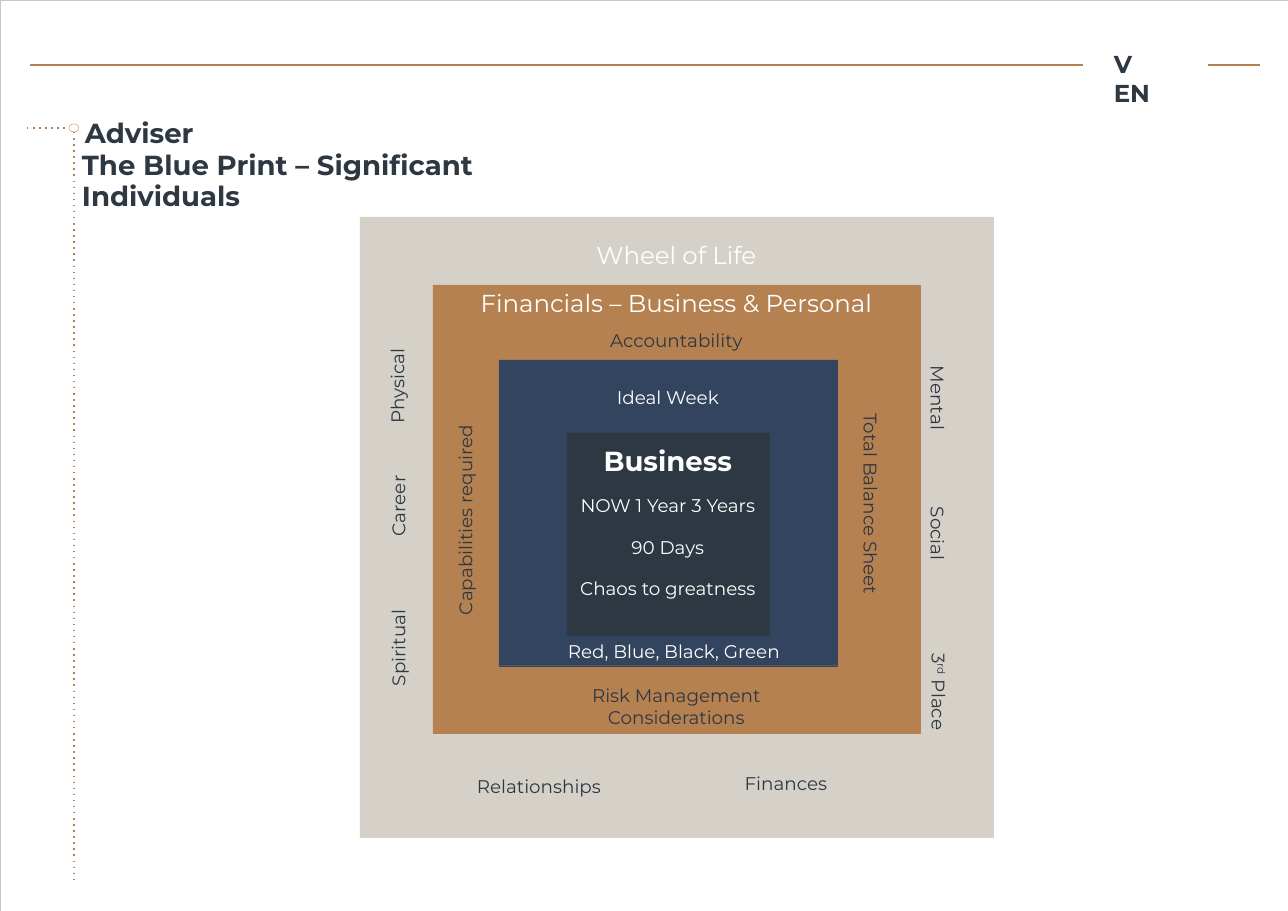
from dataclasses import dataclass

import pptx
import pptx.dml.color
import pptx.enum.dml
import pptx.enum.shapes
import pptx.enum.text
import pptx.oxml
import pptx.oxml.ns
import pptx.util

PX = 8298  # EMU per px
RGBColor = pptx.dml.color.RGBColor
WHITE = RGBColor(0xFD, 0xFF, 0xFF)
INK = RGBColor(0x2D, 0x38, 0x42)
NAVY = RGBColor(0x33, 0x44, 0x5F)
BRONZE = RGBColor(0xB6, 0x81, 0x50)
STONE = RGBColor(0xD5, 0xD1, 0xC9)
FRAME_GREY = RGBColor(0xC7, 0xC7, 0xC7)

SHAPES = pptx.enum.shapes.MSO_SHAPE
ALIGN = pptx.enum.text.PP_ALIGN
ANCHOR = pptx.enum.text.MSO_ANCHOR
THICKNESS = 26  # px across a label


@dataclass(frozen=True)
class Line:
    text: str  # text between bars is raised
    size: int = 12
    color: RGBColor = INK
    bold: bool = False
    before: float = 0  # pt
    indent: int = 0  # px


@dataclass(frozen=True)
class Layer:
    x: int
    y: int
    width: int
    height: int
    color: RGBColor
    inset: int
    lines: tuple[Line, ...]


@dataclass(frozen=True)
class Label:
    text: str
    center_x: int
    center_y: int
    length: int
    turn: str = "horz"


@dataclass(frozen=True)
class Rule:
    x1: int
    y1: int
    x2: int
    y2: int
    dotted: bool = False


LAYERS = (
    Layer(360, 217, 633, 621, STONE, 23, (Line("Wheel of Life", 16, WHITE),)),
    Layer(433, 285, 487, 449, BRONZE, 3, (
        Line("Financials – Business & Personal", 16, WHITE),
        Line("Accountability", before=7.9),
        Line("Risk Management", before=217.5),
        Line("Considerations"),
    )),
    Layer(499, 360, 338, 306, NAVY, 26, (
        Line("Ideal Week", color=WHITE),
        Line("Red, Blue, Black, Green", color=WHITE, before=152, indent=12),
    )),
    Layer(567, 433, 202, 202, INK, 11, (
        Line("Business", 18, WHITE, bold=True),
        Line("NOW 1 Year 3 Years", color=WHITE, before=11),
        Line("90 Days", color=WHITE, before=13.5),
        Line("Chaos to greatness", color=WHITE, before=12.5),
    )),
)

LABELS = (
    Label("Physical", 397, 386, 90, "vert270"),
    Label("Career", 398, 506, 80, "vert270"),
    Label("Spiritual", 398, 648, 90, "vert270"),
    Label("Mental", 938, 398, 80, "vert"),
    Label("Social", 938, 534, 70, "vert"),
    Label("3|rd| Place", 939, 692, 90, "vert"),
    Label("Capabilities required", 465, 520, 210, "vert270"),
    Label("Total Balance Sheet", 871, 504, 200, "vert"),
    Label("Relationships", 539, 786, 140),
    Label("Finances", 786, 783, 100),
)

RULES = (
    Rule(30, 65, 1083, 65),
    Rule(1208, 65, 1260, 65),
    Rule(27, 128, 69, 128, dotted=True),
    Rule(74, 132, 74, 884, dotted=True),
)


def apply(target, values: dict) -> None:
    for name, value in values.items():
        setattr(target, name, value)


def box(x: int, y: int, width: int, height: int) -> tuple[int, ...]:
    return tuple(PX * side for side in (x, y, width, height))


def write(frame, lines: tuple[Line, ...], align, inset: int = 0,
          anchor=ANCHOR.TOP, spacing: float | None = None) -> None:
    apply(frame, {"word_wrap": True, "vertical_anchor": anchor, "margin_left": 0,
                  "margin_right": 0, "margin_top": inset * PX, "margin_bottom": 0})
    for index, line in enumerate(lines):
        paragraph = frame.add_paragraph() if index else frame.paragraphs[0]
        apply(paragraph, {"alignment": align, "space_before": pptx.util.Pt(line.before)})
        if spacing:
            paragraph.line_spacing = pptx.util.Pt(spacing)
        if line.indent:
            paragraph._p.get_or_add_pPr().set("marL", str(line.indent * PX))
        for part, text in enumerate(line.text.split("|")):
            run = paragraph.add_run()
            run.text = text
            apply(run.font, {"name": "Montserrat", "size": pptx.util.Pt(line.size),
                             "bold": line.bold})
            run.font.color.rgb = line.color
            if part % 2:
                run._r.get_or_add_rPr().set("baseline", "32000")


def draw_outline(slide, kind, area: tuple[int, ...], color: RGBColor):
    shape = slide.shapes.add_shape(kind, *area)
    shape.shadow.inherit = False
    shape.fill.background()
    shape.line.color.rgb = color
    shape.line.width = pptx.util.Pt(0.25)
    return shape


def draw_layer(slide, layer: Layer) -> None:
    area = box(layer.x, layer.y, layer.width, layer.height)
    square = draw_outline(slide, SHAPES.RECTANGLE, area, layer.color)
    square.fill.solid()
    square.fill.fore_color.rgb = layer.color
    write(square.text_frame, layer.lines, ALIGN.CENTER, layer.inset)


def draw_label(slide, label: Label) -> None:
    width, height = label.length, THICKNESS
    if label.turn != "horz":
        width, height = height, width
    area = box(label.center_x - width // 2, label.center_y - height // 2, width, height)
    frame = slide.shapes.add_textbox(*area).text_frame
    write(frame, (Line(label.text),), ALIGN.CENTER, anchor=ANCHOR.MIDDLE)
    frame._txBody.bodyPr.set("vert", label.turn)


def draw_rule(slide, rule: Rule) -> None:
    ends = box(rule.x1, rule.y1, rule.x2, rule.y2)
    connector = slide.shapes.add_connector(pptx.enum.shapes.MSO_CONNECTOR.STRAIGHT, *ends)
    connector.line.color.rgb = BRONZE
    connector.line.width = pptx.util.Pt(1)
    properties = connector._element.spPr
    if rule.dotted:
        connector.line.dash_style = pptx.enum.dml.MSO_LINE.ROUND_DOT
        properties.find(".//" + pptx.oxml.ns.qn("a:prstDash")).set("val", "dot")
    properties.append(pptx.oxml.parse_xml(
        f"<a:effectLst {pptx.oxml.ns.nsdecls('a')}/>"))


def main() -> None:
    deck = pptx.Presentation()
    apply(deck, {"slide_width": pptx.util.Inches(11.69),
                 "slide_height": pptx.util.Inches(8.27)})
    slide = deck.slides.add_slide(deck.slide_layouts[6])

    # Page frame
    page = (0, 0, deck.slide_width, deck.slide_height)
    draw_outline(slide, SHAPES.RECTANGLE, page, FRAME_GREY)

    # Nested squares and their labels
    for layer in LAYERS:
        draw_layer(slide, layer)
    for label in LABELS:
        draw_label(slide, label)

    # Header and margin rules
    for rule in RULES:
        draw_rule(slide, rule)
    draw_outline(slide, SHAPES.OVAL, box(69, 124, 10, 8), BRONZE)

    # Header initials
    initials = slide.shapes.add_textbox(*box(1114, 49, 45, 60))
    write(initials.text_frame, (Line("V EN", 16, bold=True),), ALIGN.LEFT)

    # Title
    title = slide.shapes.add_textbox(*box(82, 118, 500, 95))
    write(title.text_frame, (
        Line("Adviser", 18, bold=True, indent=3),
        Line("The Blue Print – Significant Individuals", 18, bold=True),
    ), ALIGN.LEFT, spacing=20.6)

    deck.save("out.pptx")


if __name__ == "__main__":
    main()
